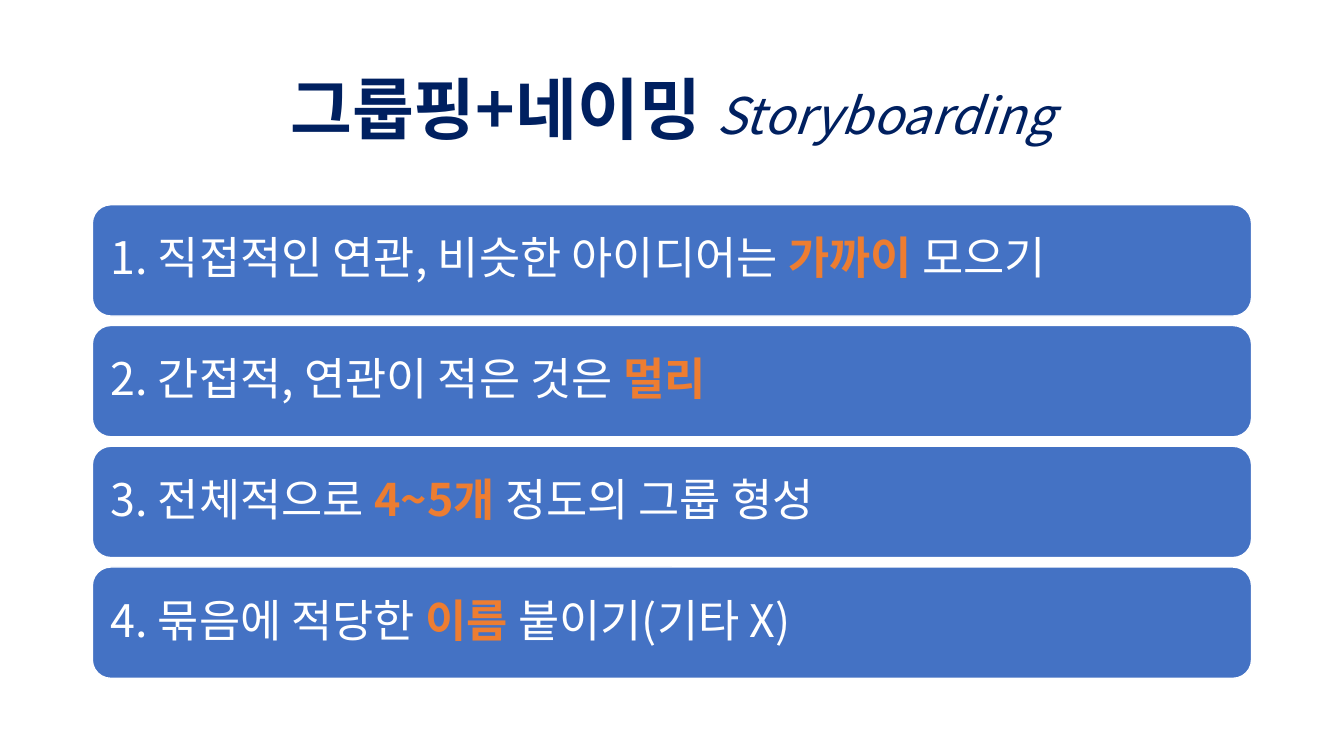
"""Build the grouping and naming slide with a title and four numbered bars."""
from dataclasses import dataclass

from lxml.etree import SubElement
from pptx import Presentation
from pptx.dml.color import RGBColor
from pptx.enum.shapes import MSO_SHAPE
from pptx.enum.text import MSO_ANCHOR, MSO_AUTO_SIZE, PP_ALIGN
from pptx.oxml.ns import qn
from pptx.slide import Slide
from pptx.util import Emu, Pt


@dataclass(frozen=True)
class Theme:
    font: str = "Noto Sans CJK KR"
    navy: str = "002060"
    blue: str = "4472C4"
    orange: str = "ED7D31"
    white: str = "FFFFFF"
    title_size: int = 48
    subtitle_size: int = 36
    body_size: int = 32


@dataclass(frozen=True)
class Span:
    text: str
    size: int
    color: str
    bold: bool = False
    italic: bool = False


@dataclass(frozen=True)
class Step:
    lead: str
    key: str
    tail: str = ""


THEME = Theme()
LEFT, WIDTH = 88, 1104
TITLE_TOP, TITLE_HEIGHT = 38, 139
BAR_TOP, BAR_HEIGHT, BAR_PITCH, BAR_INSET = 195, 106, 115, 12

TITLE = (
    Span("그룹핑+네이밍 ", THEME.title_size, THEME.navy, bold=True),
    Span("Storyboarding", THEME.subtitle_size, THEME.navy, italic=True),
)
STEPS = (
    Step("1. 직접적인 연관, 비슷한 아이디어는 ", "가까이 ", "모으기"),
    Step("2. 간접적, 연관이 적은 것은 ", "멀리"),
    Step("3. 전체적으로 ", "4~5개 ", "정도의 그룹 형성"),
    Step("4. 묶음에 적당한 ", "이름", " 붙이기(기타 X)"),
)


def px(n: int) -> Emu:
    return Emu(n * 9525)


def apply(target: object, values: dict[str, object]) -> None:
    for name, value in values.items():
        setattr(target, name, value)


def write(p, spans: tuple[Span, ...]) -> None:
    for span in spans:
        r = p.add_run()
        r.text = span.text
        apply(r.font, {"name": THEME.font, "size": Pt(span.size),
                       "bold": span.bold, "italic": span.italic})
        r.font.color.rgb = RGBColor.from_string(span.color)
        SubElement(r.font._element, qn("a:ea"), typeface=THEME.font)


def draw_title(s: Slide) -> None:
    sp = s.shapes.title
    apply(sp, {"left": px(LEFT), "top": px(TITLE_TOP),
               "width": px(WIDTH), "height": px(TITLE_HEIGHT)})
    tf = sp.text_frame
    apply(tf, {"vertical_anchor": MSO_ANCHOR.MIDDLE, "word_wrap": True,
               "auto_size": MSO_AUTO_SIZE.NONE})
    p = tf.paragraphs[0]
    apply(p, {"alignment": PP_ALIGN.CENTER, "line_spacing": 0.9})
    write(p, TITLE)


def draw_step(s: Slide, index: int, step: Step) -> None:
    sp = s.shapes.add_shape(MSO_SHAPE.ROUNDED_RECTANGLE, px(LEFT),
                            px(BAR_TOP + index * BAR_PITCH), px(WIDTH), px(BAR_HEIGHT))
    sp.shadow.inherit = False
    sp.fill.solid()
    sp.fill.fore_color.rgb = RGBColor.from_string(THEME.blue)
    sp.line.color.rgb = RGBColor.from_string(THEME.white)
    sp.line.width = Pt(1)
    tf = sp.text_frame
    apply(tf, {"vertical_anchor": MSO_ANCHOR.MIDDLE, "word_wrap": True})
    apply(tf, {f"margin_{side}": px(BAR_INSET)
               for side in ("left", "top", "right", "bottom")})
    p = tf.paragraphs[0]
    apply(p, {"alignment": PP_ALIGN.LEFT, "line_spacing": 0.9, "space_after": Pt(11)})
    spans = (
        Span(step.lead, THEME.body_size, THEME.white),
        Span(step.key, THEME.body_size, THEME.orange, bold=True),
        Span(step.tail, THEME.body_size, THEME.white),
    )
    write(p, tuple(span for span in spans if span.text))


def main() -> None:
    prs = Presentation()
    apply(prs, {"slide_width": px(1280), "slide_height": px(720)})
    s = prs.slides.add_slide(prs.slide_layouts.get_by_name("Title Only"))
    draw_title(s)
    for index, step in enumerate(STEPS):
        draw_step(s, index, step)
    prs.save("out.pptx")


if __name__ == "__main__":
    main()
